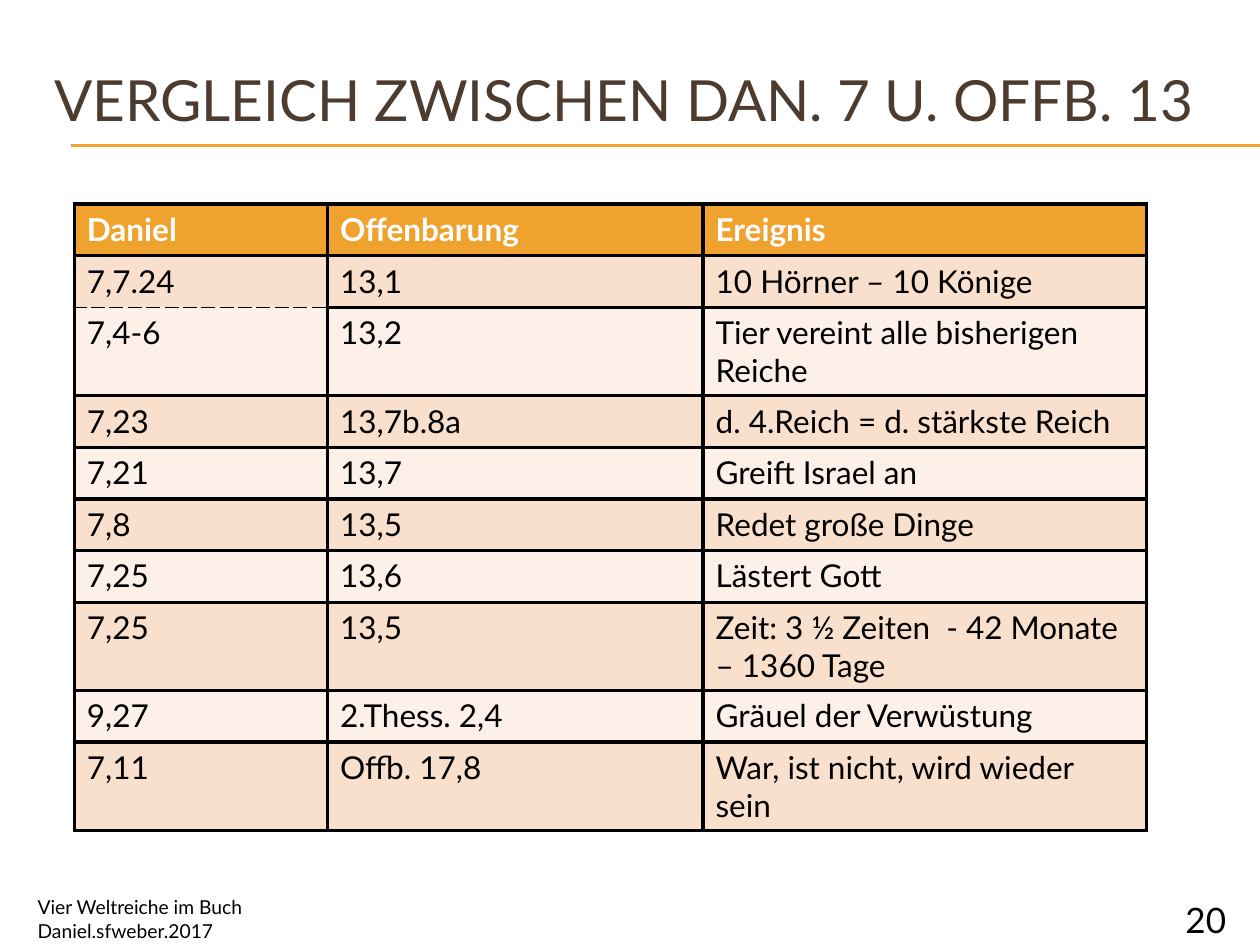
from lxml import etree
from pptx import Presentation, util as u
from pptx.dml.color import RGBColor
from pptx.enum import shapes, text
from pptx.oxml import ns

FONT = "Lato"
WHITE = RGBColor(0xFF, 0xFF, 0xFF)
BLACK = RGBColor(0x00, 0x00, 0x00)
BROWN = RGBColor(0x4E, 0x3B, 0x30)
ORANGE = RGBColor(0xF0, 0xA2, 0x2E)
BANDS = (RGBColor(0xFC, 0xF0, 0xE8), RGBColor(0xF9, 0xE0, 0xCD))

WIDTH, HEIGHT = u.Inches(10), u.Inches(7.5)
COLUMNS = (2.01, 2.98, 3.52)
ROW_HEIGHT = 0.41
SOLID, DASHED = (2.25, "solid"), (0.25, "sysDash")
DASHED_EDGES = {(1, 0, "B"), (2, 0, "T")}

ROWS = (
    ("Daniel", "Offenbarung", "Ereignis"),
    ("7,7.24", "13,1", "10 Hörner – 10 Könige"),
    ("7,4-6", "13,2", "Tier vereint alle bisherigen Reiche"),
    ("7,23", "13,7b.8a", "d. 4.Reich = d. stärkste Reich"),
    ("7,21", "13,7", "Greift Israel an"),
    ("7,8", "13,5", "Redet große Dinge"),
    ("7,25", "13,6", "Lästert Gott"),
    ("7,25", "13,5", "Zeit: 3 ½ Zeiten  - 42 Monate – 1360 Tage"),
    ("9,27", "2.Thess. 2,4", "Gräuel der Verwüstung"),
    ("7,11", "Offb. 17,8", "War, ist nicht, wird wieder sein"),
)


def share(left, top, width, height):
    """Turn percentages of the slide into a left, top, width, height box."""
    return [u.Emu(round(size * part / 100)) for size, part in
            zip((WIDTH, HEIGHT, WIDTH, HEIGHT), (left, top, width, height))]


def write(frame, wording, size, color, bold=False, align=text.PP_ALIGN.LEFT):
    """Add one formatted run to the first paragraph of a text frame."""
    paragraph = frame.paragraphs[0]
    paragraph.alignment = align
    run = paragraph.add_run()
    run.text = wording
    run.font.name = FONT
    run.font.size = u.Pt(size)
    run.font.bold = bold
    run.font.color.rgb = color


def add_title(slide, wording):
    """Move and fill the title placeholder."""
    title = slide.shapes.title
    title.left, title.top, title.width, title.height = share(3.3, 6.67, 95, 7.6)
    frame = title.text_frame
    frame.auto_size = text.MSO_AUTO_SIZE.NONE
    frame.vertical_anchor = text.MSO_ANCHOR.MIDDLE
    write(frame, wording, 32.4, BROWN)


def add_rule(slide, top):
    """Draw a thin rule from the left margin to the slide's right edge."""
    left, height = u.Inches(0.56), u.Inches(top)
    rule = slide.shapes.add_connector(
        shapes.MSO_CONNECTOR.STRAIGHT, left, height, WIDTH, height)
    rule.line.color.rgb = ORANGE
    rule.line.width = u.Pt(0.75)
    etree.SubElement(rule._element.spPr, ns.qn("a:effectLst"))


def add_note(slide, box, wording, size, align):
    """Add a wrapped text box to the foot of the slide."""
    frame = slide.shapes.add_textbox(*box).text_frame
    frame.word_wrap = True
    write(frame, wording, size, BLACK, align=align)


def set_border(cell, side, width, dash):
    """Give one side of a cell a black border."""
    line = etree.SubElement(cell._tc.get_or_add_tcPr(), ns.qn(f"a:ln{side}"),
                            w=str(u.Pt(width)))
    fill = etree.SubElement(line, ns.qn("a:solidFill"))
    etree.SubElement(fill, ns.qn("a:srgbClr"), val=str(BLACK))
    etree.SubElement(line, ns.qn("a:prstDash"), val=dash)


def add_comparison(slide):
    """Add the banded comparison table with its header row."""
    frame = slide.shapes.add_table(
        len(ROWS), len(COLUMNS), u.Inches(0.59), u.Inches(1.62),
        u.Inches(sum(COLUMNS)), u.Inches(ROW_HEIGHT * len(ROWS)))
    table = frame.table
    for column, width in zip(table.columns, COLUMNS):
        column.width = u.Inches(width)
    for row, wordings in enumerate(ROWS):
        header = row == 0
        for column, wording in enumerate(wordings):
            cell = table.cell(row, column)
            for side in "LRTB":
                dashed = (row, column, side) in DASHED_EDGES
                set_border(cell, side, *(DASHED if dashed else SOLID))
            cell.fill.solid()
            cell.fill.fore_color.rgb = ORANGE if header else BANDS[row % 2]
            write(cell.text_frame, wording, 18,
                  WHITE if header else BLACK, bold=header)


def main():
    """Build the slide and save it."""
    presentation = Presentation()
    presentation.slide_width, presentation.slide_height = WIDTH, HEIGHT
    slide = presentation.slides.add_slide(presentation.slide_layouts[5])
    for top in (1.15, 1.16):
        add_rule(slide, top)
    add_title(slide, "VERGLEICH ZWISCHEN DAN. 7 U. OFFB. 13")
    add_note(slide, share(90, 94.4, 8.3, 3.6), "20", 20, text.PP_ALIGN.RIGHT)
    add_note(slide, share(2, 94.13, 31.7, 4.27),
             "Vier Weltreiche im Buch Daniel.sfweber.2017", 11,
             text.PP_ALIGN.LEFT)
    add_comparison(slide)
    presentation.save("out.pptx")


if __name__ == "__main__":
    main()
